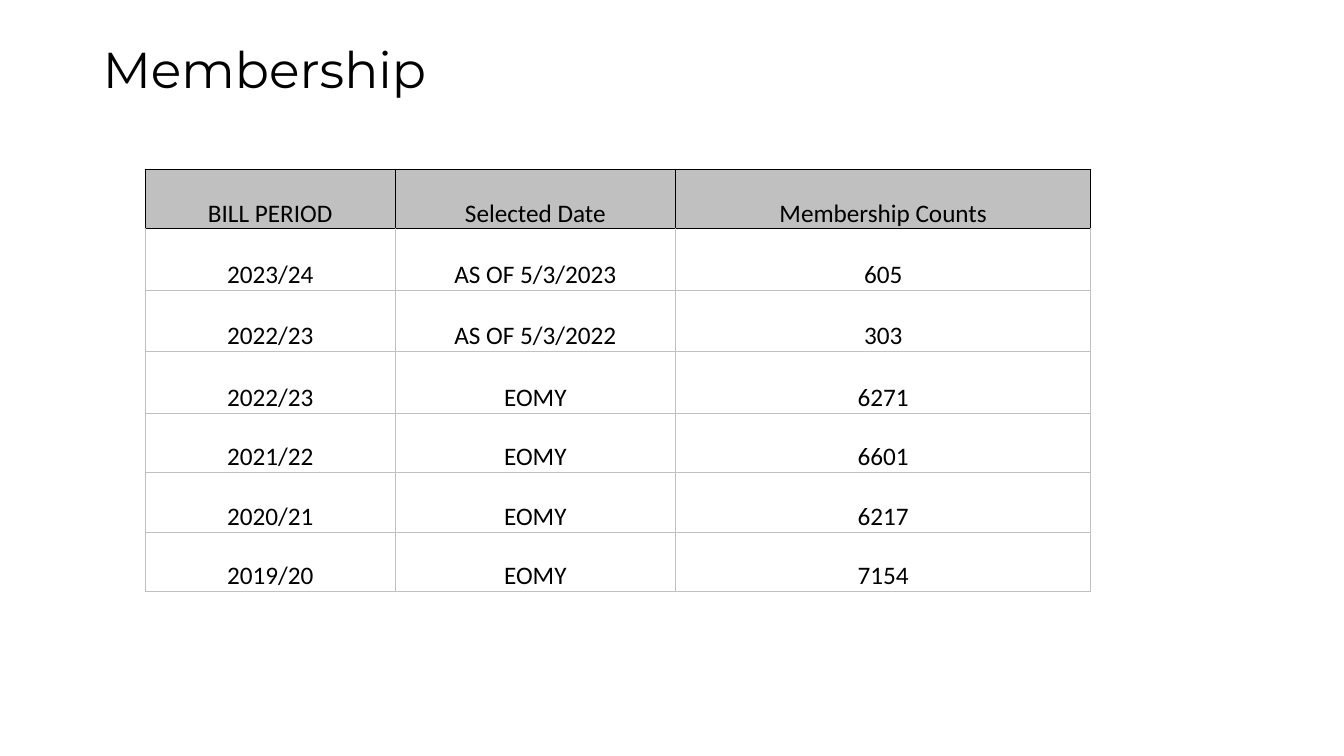
import dataclasses

import lxml.etree
import pptx
import pptx.dml.color
import pptx.enum.text
import pptx.oxml.ns
import pptx.slide
import pptx.table
import pptx.util

Inches = pptx.util.Inches
COLORS = {"ink": "000000", "gray": "C0C0C0"}


@dataclasses.dataclass
class Row:
    texts: tuple[str, str, str]
    height: float = 0.59
    head: bool = False


WIDTHS = (2.48, 2.78, 4.12)
ROWS = [
    Row(("BILL PERIOD", "Selected Date", "Membership Counts"), head=True),
    Row(("2023/24", "AS OF 5/3/2023", "605"), 0.61),
    Row(("2022/23", "AS OF 5/3/2022", "303"), 0.61),
    Row(("2022/23", "EOMY", "6271"), 0.61),
    Row(("2021/22", "EOMY", "6601")),
    Row(("2020/21", "EOMY", "6217")),
    Row(("2019/20", "EOMY", "7154")),
]


def rgb(name: str) -> pptx.dml.color.RGBColor:
    return pptx.dml.color.RGBColor.from_string(COLORS[name])


def style(para, face: str, size: int, align) -> None:
    para.alignment = align
    para.font.name = face
    para.font.size = pptx.util.Pt(size)
    para.font.color.rgb = rgb("ink")


def border(cell: pptx.table._Cell, side: str, color: str) -> None:
    qn = pptx.oxml.ns.qn
    props = cell._tc.get_or_add_tcPr()
    line = lxml.etree.SubElement(props, qn(f"a:ln{side}"), w=str(pptx.util.Pt(1)))
    fill = lxml.etree.SubElement(line, qn("a:solidFill"))
    lxml.etree.SubElement(fill, qn("a:srgbClr"), val=COLORS[color])


def draw_cell(cell: pptx.table._Cell, text: str, head: bool, below: bool) -> None:
    cell.text = text
    cell.vertical_anchor = pptx.enum.text.MSO_ANCHOR.BOTTOM
    cell.margin_left = cell.margin_right = Inches(0.07)
    cell.margin_top = cell.margin_bottom = 0
    style(cell.text_frame.paragraphs[0], "Calibri", 18, pptx.enum.text.PP_ALIGN.CENTER)
    # The header has black edges, shared with the row below it
    for side in "LRTB":
        dark = head or (below and side == "T")
        border(cell, side, "ink" if dark else "gray")
    if head:
        cell.fill.solid()
        cell.fill.fore_color.rgb = rgb("gray")
    else:
        cell.fill.background()


def draw_title(slide: pptx.slide.Slide, text: str) -> None:
    title = slide.shapes.title
    title.left, title.top = Inches(0.92), Inches(0.4)
    title.width, title.height = Inches(11.5), Inches(0.96)
    frame = title.text_frame
    frame.text = text
    frame.auto_size = pptx.enum.text.MSO_AUTO_SIZE.NONE
    frame.vertical_anchor = pptx.enum.text.MSO_ANCHOR.TOP
    para = frame.paragraphs[0]
    para.line_spacing = 0.9
    style(para, "Montserrat", 36, pptx.enum.text.PP_ALIGN.LEFT)


def draw_table(slide: pptx.slide.Slide) -> None:
    high = sum(row.height for row in ROWS)
    table = slide.shapes.add_table(
        len(ROWS), len(WIDTHS), Inches(1.44), Inches(1.68),
        Inches(sum(WIDTHS)), Inches(high)).table
    table.first_row = table.horz_banding = False
    for col, width in zip(table.columns, WIDTHS):
        col.width = Inches(width)
    for i, row in enumerate(ROWS):
        table.rows[i].height = Inches(row.height)
        below = i > 0 and ROWS[i - 1].head
        for j, text in enumerate(row.texts):
            draw_cell(table.cell(i, j), text, row.head, below)


def main() -> None:
    deck = pptx.Presentation()
    deck.slide_width, deck.slide_height = Inches(13.33), Inches(7.5)
    slide = deck.slides.add_slide(deck.slide_layouts.get_by_name("Title Only"))
    # Title
    draw_title(slide, "Membership")
    # Member counts by bill period
    draw_table(slide)
    deck.save("out.pptx")


if __name__ == "__main__":
    main()
